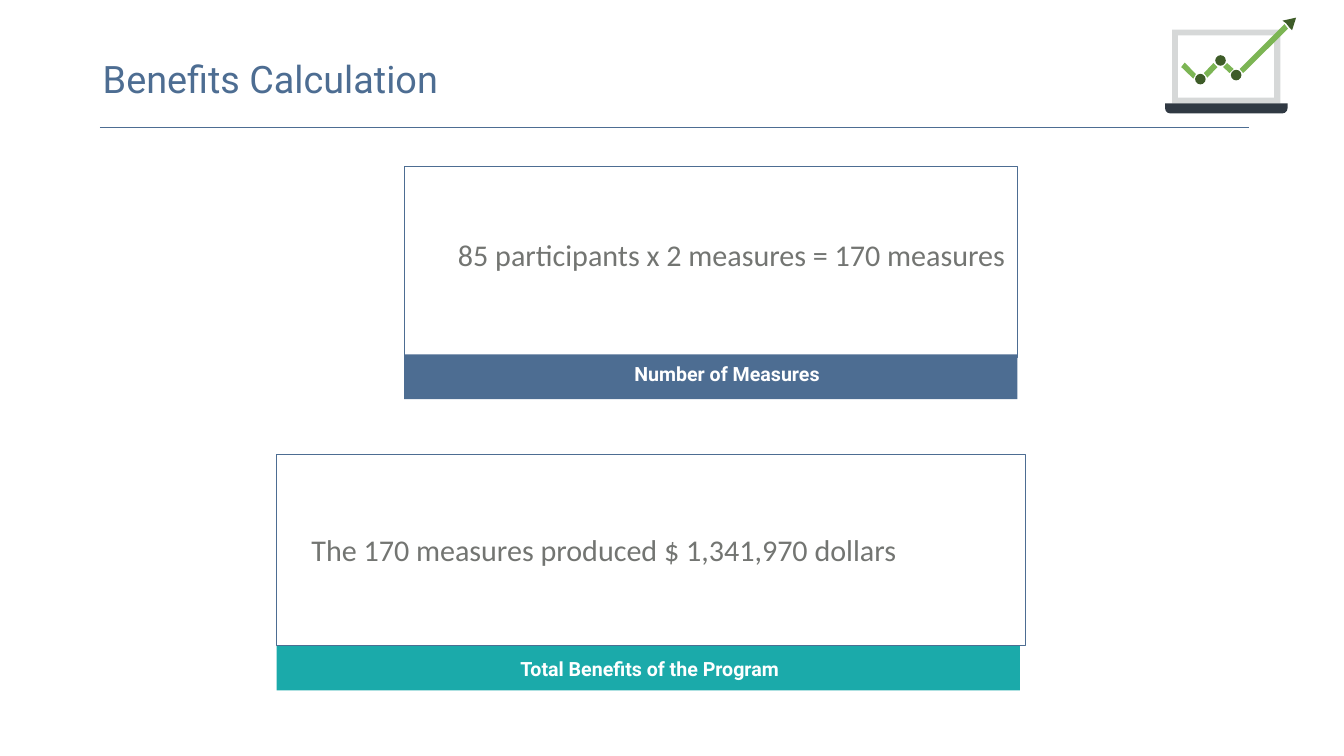
import pptx
import pptx.util
import pptx.dml.color
import pptx.enum.shapes
import pptx.enum.text
import pptx.oxml

Inches, Pt = pptx.util.Inches, pptx.util.Pt
RGBColor = pptx.dml.color.RGBColor
Shape = pptx.enum.shapes.MSO_SHAPE
Align = pptx.enum.text.PP_ALIGN

BLUE = RGBColor(0x4D, 0x6D, 0x92)
TEAL = RGBColor(0x1B, 0xAA, 0xAA)
GREY = RGBColor(0x73, 0x75, 0x72)
WHITE = RGBColor(0xFF, 0xFF, 0xFF)
SCREEN_FRAME = RGBColor(0xD6, 0xD8, 0xD8)
LAPTOP_BASE = RGBColor(0x30, 0x39, 0x43)
LIGHT_GREEN = RGBColor(0x7C, 0xB5, 0x54)
DARK_GREEN = RGBColor(0x3E, 0x5C, 0x28)

SLIDE_W, SLIDE_H = 26.67, 15
PANEL_H, BAND_H = 3.79, 0.89

TITLE = "Benefits Calculation"
# Boxes are left, top, width, height in inches; caption_indent shifts the centred caption
PANELS = [
    dict(statement="85 participants x 2 measures = 170 measures",
         statement_box=(8.99, 4.64, 11.2, 0.82),
         caption="Number of Measures", caption_box=(8.05, 7.09, 9.95, 0.67),
         caption_indent=2.8, left=8.02, top=3.3, width=12.17,
         band_top=7.03, band_width=12.17, color=BLUE),
    dict(statement="The 170 measures produced $ 1,341,970 dollars",
         statement_box=(6.08, 10.49, 13.71, 0.82),
         caption="Total Benefits of the Program", caption_box=(5.43, 12.94, 14.92, 0.67),
         caption_indent=0, left=5.49, top=9.02, width=14.86,
         band_top=12.81, band_width=14.75, color=TEAL),
]

LAPTOP = [
    (Shape.RECTANGLE, (23.26, 0.59, 2.15, 1.46), SCREEN_FRAME),
    (Shape.ROUND_2_SAME_RECTANGLE, (23.12, 2.05, 2.43, 0.2), LAPTOP_BASE),
    (Shape.RECTANGLE, (23.38, 0.7, 1.9, 1.24), WHITE),
]
TREND_SEGMENTS = [
    [(23.51, 1.24), (23.73, 1.47), (23.68, 1.56), (23.44, 1.33)],
    [(24.35, 1.25), (24.48, 1.37), (24.4, 1.45), (24.27, 1.33)],
    [(24.08, 1.25), (24.16, 1.33), (23.96, 1.54), (23.89, 1.45)],
    [(24.6, 1.37), (25.49, 0.48), (25.56, 0.57), (24.67, 1.45)],
]
TREND_TIP = [(25.45, 0.41), (25.52, 0.46), (25.59, 0.55), (25.64, 0.6), (25.72, 0.35)]
TREND_POINTS = [(23.82, 1.57), (24.22, 1.2), (24.53, 1.49)]
POINT_SIZE = 0.21


def add_filled(slide, kind, box, color):
    shape = slide.shapes.add_shape(kind, *map(Inches, box))
    paint(shape, color)
    return shape


def paint(shape, color):
    """Give the shape a plain fill without line or shadow."""
    shape.shadow.inherit = False
    shape.fill.solid()
    shape.fill.fore_color.rgb = color
    shape.line.fill.background()


def add_outline(slide, box):
    shape = slide.shapes.add_shape(Shape.RECTANGLE, *map(Inches, box))
    shape.shadow.inherit = False
    shape.fill.background()
    shape.line.color.rgb = BLUE
    shape.line.width = Pt(0.75)


def add_polygon(slide, points, color):
    corners = [(Inches(x), Inches(y)) for x, y in points]
    builder = slide.shapes.build_freeform(*corners[0])
    builder.add_line_segments(corners[1:], close=True)
    paint(builder.convert_to_shape(), color)


def add_text(slide, text, box, size, font, color, bold=False,
             align=Align.LEFT, margins=(0.1, 0.05), indent=0):
    frame = slide.shapes.add_textbox(*map(Inches, box)).text_frame
    frame.word_wrap = True
    side, edge = margins
    frame.margin_left, frame.margin_right = Inches(side + indent), Inches(side)
    frame.margin_top = frame.margin_bottom = Inches(edge)
    paragraph = frame.paragraphs[0]
    paragraph.text = text
    paragraph.alignment = align
    style = paragraph.runs[0].font
    style.size, style.name, style.bold = Pt(size), font, bold
    style.color.rgb = color


def add_header(slide):
    rule = slide.shapes.add_connector(
        pptx.enum.shapes.MSO_CONNECTOR.STRAIGHT,
        *map(Inches, (1.98, 2.53, 24.79, 2.53)))
    rule.line.color.rgb = BLUE
    rule.line.width = Pt(2.25)
    rule._element.spPr.append(pptx.oxml.parse_xml(
        '<a:effectLst xmlns:a="http://schemas.openxmlformats.org/drawingml/2006/main"/>'))
    add_text(slide, TITLE, (1.94, 1.06, 18.9, 1.01), 54, "Roboto", BLUE)


def add_panel(slide, panel):
    left = panel["left"]
    add_filled(slide, Shape.RECTANGLE,
               (left, panel["band_top"], panel["band_width"], BAND_H), panel["color"])
    add_text(slide, panel["caption"], panel["caption_box"], 28, "Roboto", WHITE,
             bold=True, align=Align.CENTER, margins=(0.2, 0.1),
             indent=panel["caption_indent"])
    add_outline(slide, (left, panel["top"], panel["width"], PANEL_H))
    add_text(slide, panel["statement"], panel["statement_box"], 43, "Calibri", GREY)


def add_trend_icon(slide):
    for kind, box, color in LAPTOP:
        part = add_filled(slide, kind, box, color)
        if kind == Shape.ROUND_2_SAME_RECTANGLE:
            part.adjustments[0], part.adjustments[1] = 0, 0.5
    for segment in TREND_SEGMENTS:
        add_polygon(slide, segment, LIGHT_GREEN)
    for x, y in TREND_POINTS:
        add_filled(slide, Shape.OVAL,
                   (x - POINT_SIZE / 2, y - POINT_SIZE / 2, POINT_SIZE, POINT_SIZE),
                   DARK_GREEN)
    add_polygon(slide, TREND_TIP, DARK_GREEN)


def main():
    deck = pptx.Presentation()
    deck.slide_width, deck.slide_height = Inches(SLIDE_W), Inches(SLIDE_H)
    slide = deck.slides.add_slide(deck.slide_layouts[6])
    add_header(slide)
    for panel in PANELS:
        add_panel(slide, panel)
    add_trend_icon(slide)
    deck.save("out.pptx")


if __name__ == "__main__":
    main()
